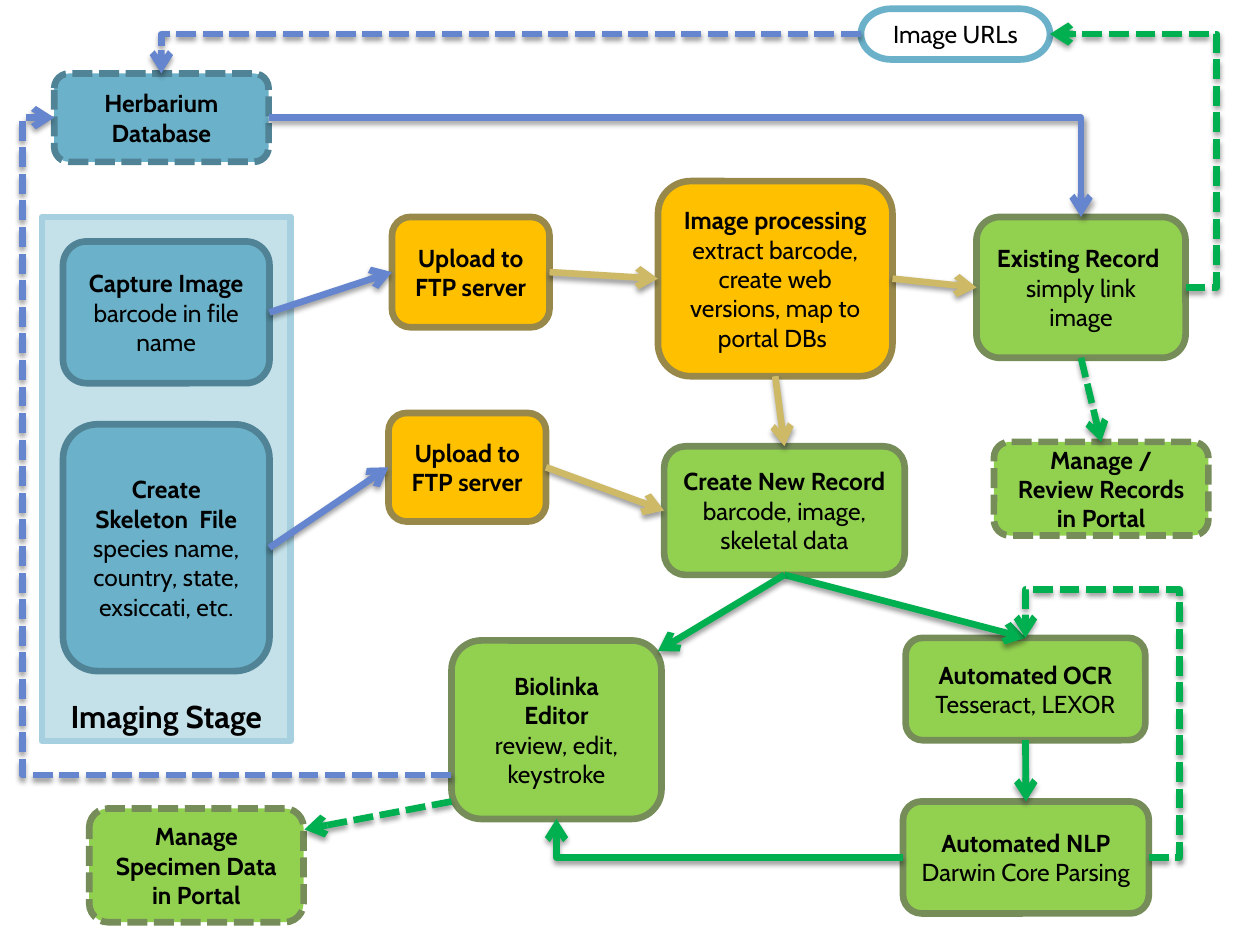
"""Build a one-slide workflow diagram for herbarium imaging and record processing."""
import lxml.etree
import pptx
import pptx.dml.color
import pptx.enum.dml
import pptx.enum.shapes
import pptx.enum.text
import pptx.oxml.ns
import pptx.util

Pt = pptx.util.Pt
qn = pptx.oxml.ns.qn
SHAPES = pptx.enum.shapes.MSO_SHAPE
ANCHOR = pptx.enum.text.MSO_ANCHOR
SITES = ["top", "left", "bottom", "right"]

BLUE = ("6BB1C9", "4F8395")
GOLD = ("FFC000", "98894B")
LIME = ("92D050", "768D5A")
PALE = ("C4E0E9", "A6D0DF")
WHITE = ("FFFFFF", "6BB1C9")
BLUE_FLOW, GOLD_FLOW, GREEN_FLOW = "6585CF", "CEB966", "00B050"


def color(value):
    return pptx.dml.color.RGBColor.from_string(value)


def add_text(paragraph, text, *, size=14, bold=False, fill="000000", font="Cabin"):
    paragraph.alignment = pptx.enum.text.PP_ALIGN.CENTER
    run = paragraph.add_run()
    run.text = text
    run.font.name = font
    run.font.size = Pt(size)
    run.font.bold = bold
    run.font.color.rgb = color(fill)


def add_xml(parent, tag, **attributes):
    values = {name: str(value) for name, value in attributes.items()}
    return lxml.etree.SubElement(parent, qn(tag), values)


def side_point(shape, side):
    across = {"left": 0, "right": shape.width}.get(side, shape.width // 2)
    down = {"top": 0, "bottom": shape.height}.get(side, shape.height // 2)
    return shape.left + across, shape.top + down


class Diagram:
    def __init__(self, slide, line_width=3.8):
        self.slide = slide
        self.line_width = line_width

    def outline(self, line, line_color, dashed):
        line.color.rgb = color(line_color)
        line.width = Pt(self.line_width)
        if dashed:
            line.dash_style = pptx.enum.dml.MSO_LINE.SQUARE_DOT

    def box(self, bounds, colors, heading="", body="", *, inline=False, dashed=False,
            size=14, kind=SHAPES.ROUNDED_RECTANGLE, anchor=ANCHOR.MIDDLE):
        shape = self.slide.shapes.add_shape(kind, *map(Pt, bounds))
        shape.shadow.inherit = False
        shape.fill.solid()
        shape.fill.fore_color.rgb = color(colors[0])
        self.outline(shape.line, colors[1], dashed)
        frame = shape.text_frame
        frame.word_wrap = True
        frame.vertical_anchor = anchor
        paragraph = frame.paragraphs[0]
        for index, text in enumerate(heading.splitlines()):
            paragraph = frame.add_paragraph() if index else paragraph
            add_text(paragraph, text, size=size, bold=True)
        if body:
            if heading and not inline:
                paragraph = frame.add_paragraph()
            add_text(paragraph, body, size=size)
        return shape

    def arrow(self, start, end, line_color, *, dashed=False, elbow=None, adjust=()):
        points = []
        for end_point in (start, end):
            glued = end_point[1] in SITES
            points += side_point(*end_point) if glued else map(Pt, end_point)
        straight = pptx.enum.shapes.MSO_CONNECTOR.STRAIGHT
        connector = self.slide.shapes.add_connector(straight, *points)
        self.outline(connector.line, line_color, dashed)
        properties = connector.element.spPr
        if elbow:
            geometry = properties.find(qn("a:prstGeom"))
            geometry.set("prst", elbow)
            guides = geometry.find(qn("a:avLst"))
            for index, share in enumerate(adjust, 1):
                add_xml(guides, "a:gd", name=f"adj{index}", fmla=f"val {round(share * 100000)}")
        else:
            for target, connect in ((start, connector.begin_connect), (end, connector.end_connect)):
                if target[1] in SITES:
                    connect(target[0], SITES.index(target[1]))
        add_xml(connector.get_or_add_ln(), "a:tailEnd", type="arrow")
        effects = add_xml(properties, "a:effectLst")
        shadow = add_xml(effects, "a:outerShdw", blurRad=Pt(3.1), dist=Pt(2), dir=5400000,
                         rotWithShape=0)
        add_xml(add_xml(shadow, "a:srgbClr", val="000000"), "a:alpha", val=38000)


def build(diagram):
    box, arrow = diagram.box, diagram.arrow
    box((24, 124, 142, 299.5), PALE, "Imaging Stage", size=18,
        kind=SHAPES.RECTANGLE, anchor=ANCHOR.BOTTOM)
    capture = box((36, 138, 118, 81), BLUE, "Capture Image", "barcode in file name")
    skeleton = box((36, 242.5, 118, 141), BLUE, "Create Skeleton  File",
                   "species name, country, state, exsiccati, etc.")
    image_upload, file_upload = [
        box(bounds, GOLD, "Upload to FTP server")
        for bounds in ((224, 124, 90, 63), (222, 236, 90, 62))]
    processing = box((376, 103.5, 134, 111.5), GOLD, "Image processing",
                     " extract barcode, create web versions, map to portal DBs ", inline=True)
    herbarium = box((31, 42, 122.5, 50.5), BLUE, "Herbarium Database", dashed=True)
    urls = box((492, 5, 108, 29), WHITE, body="Image URLs", kind=SHAPES.FLOWCHART_TERMINATOR)
    existing = box((558, 124, 119.5, 80.5), LIME, "Existing Record ", "simply link image")
    records = box((568, 252.5, 122.5, 53.5), LIME, "Manage / Review Records in Portal",
                  dashed=True)
    new_record = box((379.5, 255, 137.5, 73.5), LIME, "Create New Record",
                     " barcode, image, skeletal data", inline=True)
    editor = box((258, 366, 120, 102), LIME, "Biolinka\nEditor", "review, edit, keystroke")
    ocr = box((517.5, 364.5, 137, 58.5), LIME, "Automated OCR", "Tesseract, LEXOR")
    nlp = box((516, 458, 140.5, 64), LIME, "Automated NLP", "Darwin Core Parsing")
    box((51, 462, 122.5, 65), LIME, "Manage Specimen Data in Portal", dashed=True)

    arrow((capture, "right"), (image_upload, "left"), BLUE_FLOW)
    arrow((skeleton, "right"), (file_upload, "left"), BLUE_FLOW)
    arrow((image_upload, "right"), (processing, "left"), GOLD_FLOW)
    arrow((file_upload, "right"), (new_record, "left"), GOLD_FLOW)
    arrow((processing, "right"), (existing, "left"), GOLD_FLOW)
    arrow((processing, "bottom"), (new_record, "top"), GOLD_FLOW)
    arrow((new_record, "bottom"), (ocr, "top"), GREEN_FLOW)
    arrow((new_record, "bottom"), (376, 372), GREEN_FLOW)
    arrow((ocr, "bottom"), (nlp, "top"), GREEN_FLOW)
    arrow((existing, "bottom"), (records, "top"), GREEN_FLOW, dashed=True)
    arrow((258, 458), (174, 474), GREEN_FLOW, dashed=True)

    arrow((herbarium, "right"), (existing, "top"), BLUE_FLOW, elbow="bentConnector2")
    arrow((urls, "left"), (herbarium, "top"), BLUE_FLOW, dashed=True, elbow="bentConnector2")
    arrow((nlp, "left"), (editor, "bottom"), GREEN_FLOW, elbow="bentConnector2")
    arrow((258, 443), (herbarium, "left"), BLUE_FLOW, dashed=True,
          elbow="bentConnector3", adjust=[1.08])
    arrow((existing, "right"), (urls, "right"), GREEN_FLOW, dashed=True,
          elbow="bentConnector3", adjust=[-0.23])
    arrow((nlp, "right"), (ocr, "top"), GREEN_FLOW, dashed=True,
          elbow="bentConnector4", adjust=[-0.25, 1.22])


def main():
    presentation = pptx.Presentation()
    presentation.slide_width, presentation.slide_height = Pt(720), Pt(540)
    build(Diagram(presentation.slides.add_slide(presentation.slide_layouts[6])))
    presentation.save("out.pptx")


if __name__ == "__main__":
    main()
